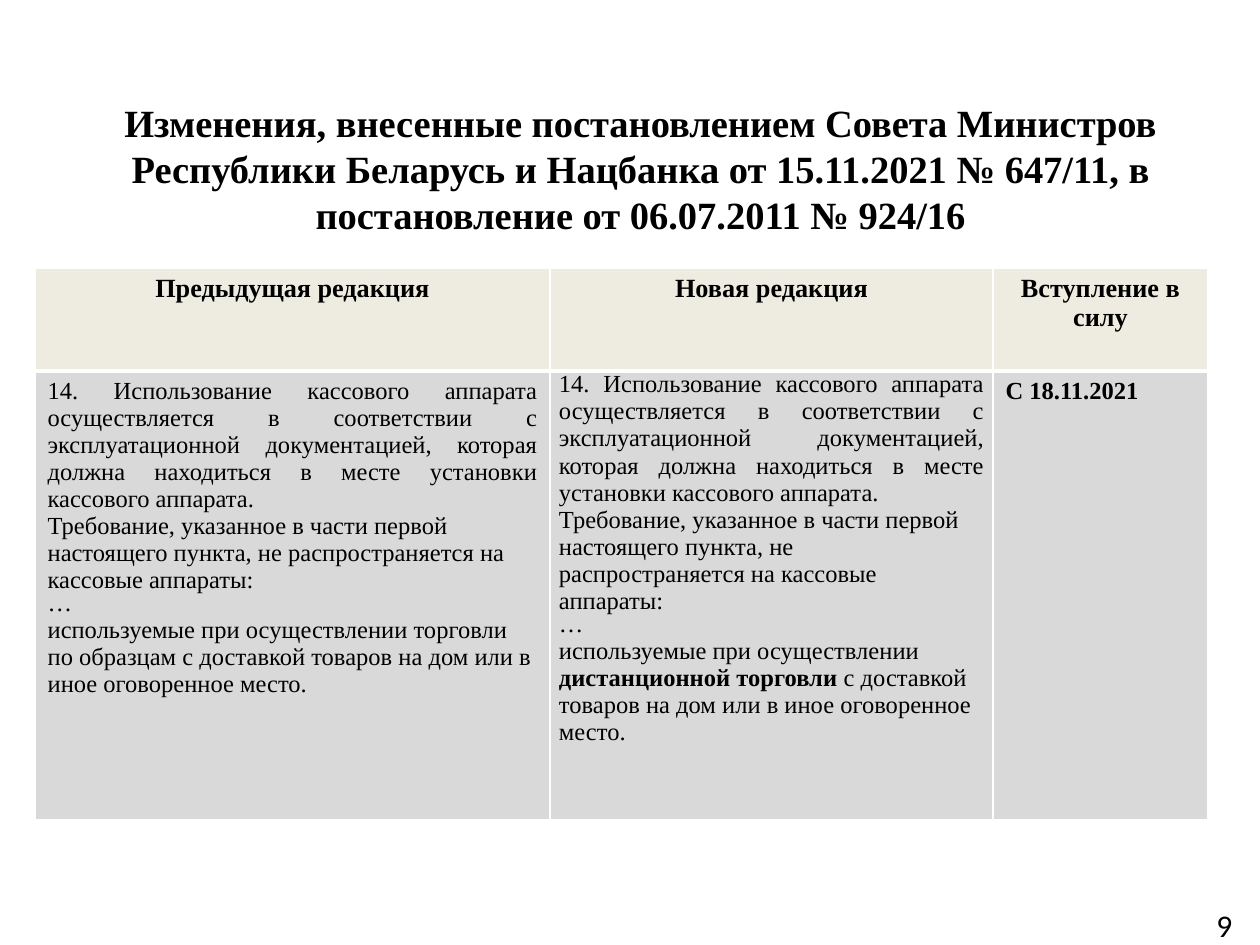
import pptx
import pptx.util
import pptx.dml.color
import pptx.enum.text
import pptx.oxml.ns
import lxml.etree

PIXEL = 914400 // 126
SERIF = "Times New Roman"
COLORS = {"text": "000000", "header": "EEECE1", "body": "D9D9D9", "border": "FFFFFF"}
CENTER = pptx.enum.text.PP_ALIGN.CENTER
JUSTIFY = pptx.enum.text.PP_ALIGN.JUSTIFY
LEFT = pptx.enum.text.PP_ALIGN.LEFT

TITLE = (
    "Изменения, внесенные постановлением Совета Министров Республики Беларусь "
    "и Нацбанка от 15.11.2021 № 647/11, в постановление от 06.07.2011 № 924/16"
)
HEADERS = ["Предыдущая редакция", "Новая редакция", "Вступление в силу"]
SHARED_CLAUSES = [
    "14. Использование кассового аппарата осуществляется в соответствии с "
    "эксплуатационной документацией, которая должна находиться в месте установки "
    "кассового аппарата.",
    "Требование, указанное в части первой настоящего пункта, не распространяется "
    "на кассовые аппараты:",
    "…",
]
OLD_CLAUSE = (
    "используемые при осуществлении торговли по образцам с доставкой товаров "
    "на дом или в иное оговоренное место."
)
NEW_CLAUSE = [
    ("используемые при осуществлении ", False),
    ("дистанционной торговли ", True),
    ("с доставкой товаров на дом или в иное оговоренное место.", False),
]
COLUMN_WIDTHS = [515, 443, 215]
ROW_HEIGHTS = [103, 449]


def px(value):
    return pptx.util.Emu(value * PIXEL)


def rgb(name):
    return pptx.dml.color.RGBColor.from_string(COLORS[name])


def format_paragraph(paragraph, size, bold=False, alignment=CENTER, font=SERIF):
    paragraph.alignment = alignment
    for run in paragraph.runs:
        run.font.name = font
        run.font.size = pptx.util.Pt(size)
        run.font.bold = bold
        run.font.color.rgb = rgb("text")


def add_text(slide, box, text, size, bold=False, font=SERIF):
    text_frame = slide.shapes.add_textbox(*map(px, box)).text_frame
    text_frame.word_wrap = True
    text_frame.vertical_anchor = pptx.enum.text.MSO_ANCHOR.MIDDLE
    text_frame.text = text
    format_paragraph(text_frame.paragraphs[0], size, bold, font=font)


def style_cell(cell, fill, bottom_width=1):
    properties = cell._tc.get_or_add_tcPr()
    for side, width in (("L", 1), ("R", 1), ("T", 1), ("B", bottom_width)):
        line = lxml.etree.SubElement(properties, pptx.oxml.ns.qn(f"a:ln{side}"))
        line.set("w", str(pptx.util.Pt(width)))
        solid = lxml.etree.SubElement(line, pptx.oxml.ns.qn("a:solidFill"))
        color = lxml.etree.SubElement(solid, pptx.oxml.ns.qn("a:srgbClr"))
        color.set("val", COLORS["border"])
    cell.fill.solid()
    cell.fill.fore_color.rgb = rgb(fill)


def fill_clauses(cell, last_clause):
    cell.text_frame.text = "\n".join(SHARED_CLAUSES + [last_clause])
    for index, paragraph in enumerate(cell.text_frame.paragraphs):
        format_paragraph(paragraph, 14, alignment=LEFT if index else JUSTIFY)
    cell.text_frame.paragraphs[2].line_spacing = pptx.util.Pt(13)


def emphasize_new_clause(paragraph):
    paragraph.text = ""
    for text, bold in NEW_CLAUSE:
        paragraph.add_run().text = text
    format_paragraph(paragraph, 14, alignment=LEFT)
    for run, (text, bold) in zip(paragraph.runs, NEW_CLAUSE):
        run.font.bold = bold


def add_comparison_table(slide):
    frame = slide.shapes.add_table(
        2, 3, px(35), px(268), px(sum(COLUMN_WIDTHS)), px(sum(ROW_HEIGHTS))
    )
    table = frame.table
    for column, width in zip(table.columns, COLUMN_WIDTHS):
        column.width = px(width)
    for row, height in zip(table.rows, ROW_HEIGHTS):
        row.height = px(height)
    for index, header in enumerate(HEADERS):
        cell = table.cell(0, index)
        style_cell(cell, "header", bottom_width=3)
        cell.text_frame.text = header
        format_paragraph(cell.text_frame.paragraphs[0], 15, bold=True)
        style_cell(table.cell(1, index), "body")

    old_cell, new_cell, date_cell = table.rows[1].cells
    fill_clauses(old_cell, OLD_CLAUSE)
    fill_clauses(new_cell, "")
    emphasize_new_clause(new_cell.text_frame.paragraphs[-1])
    new_cell.margin_left = new_cell.margin_right = px(9)
    new_cell.margin_top = new_cell.margin_bottom = 0
    date_cell.text_frame.text = "С 18.11.2021"
    format_paragraph(date_cell.text_frame.paragraphs[0], 14, True, JUSTIFY)


def main():
    presentation = pptx.Presentation()
    presentation.slide_width = px(1260)
    presentation.slide_height = px(945)
    slide = presentation.slides.add_slide(presentation.slide_layouts[6])
    add_text(slide, (54, 96, 1173, 144), TITLE, 22, bold=True)
    add_comparison_table(slide)
    add_text(slide, (1189, 905, 71, 40), "9", 18, font="Calibri")
    presentation.save("out.pptx")


if __name__ == "__main__":
    main()
